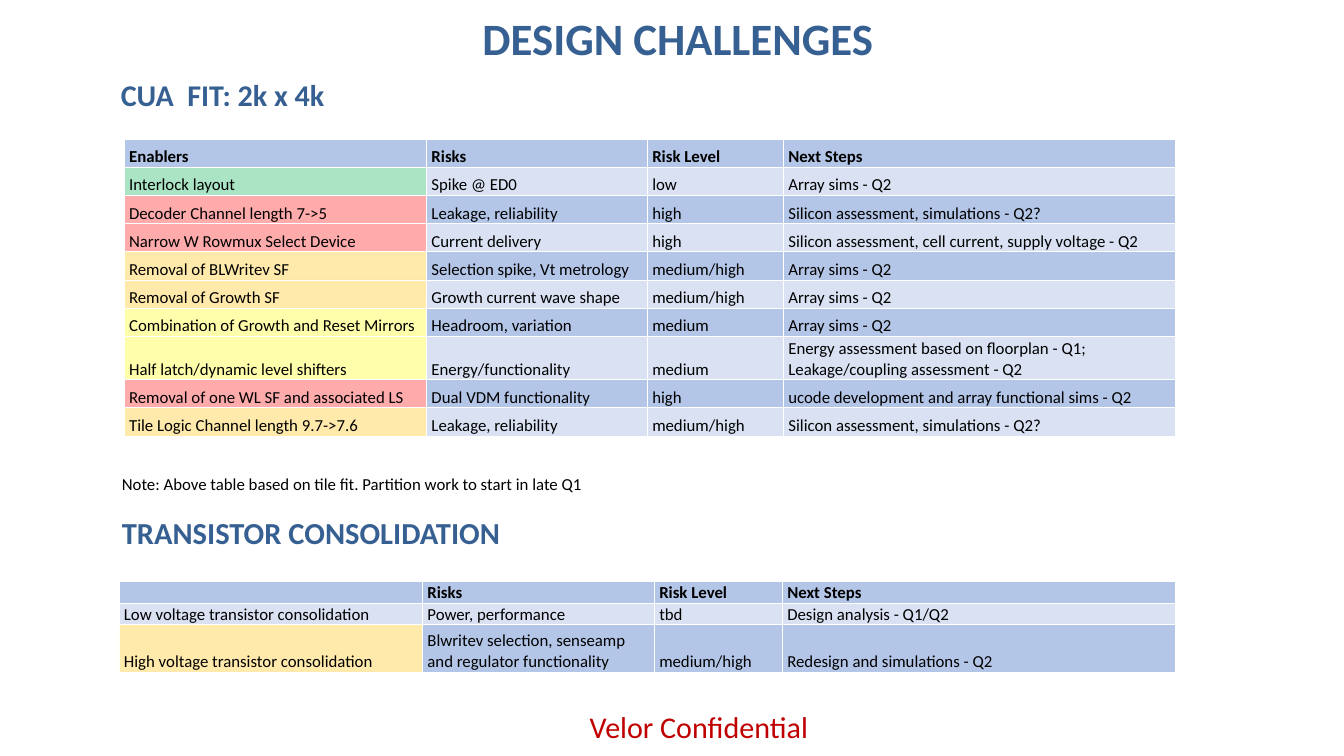
from dataclasses import dataclass

from lxml.etree import SubElement
from pptx import Presentation
from pptx.dml.color import RGBColor
from pptx.enum.text import MSO_ANCHOR as Anchor, PP_ALIGN as Align
from pptx.oxml import parse_xml
from pptx.oxml.ns import nsdecls, qn
from pptx.util import Inches, Pt

BLACK, WHITE, NAVY, CRIMSON = "000000", "FFFFFF", "376092", "C00000"
BANDS = ("B4C6E7", "D9E1F2")
GREEN, RED, AMBER, YELLOW = "00B050", "FF0000", "FFC000", "FFFF00"
STATUS_OPACITY = 33  # percent
FONT = "Calibri"

presentation = Presentation()
presentation.slide_width = Inches(13.33)
presentation.slide_height = Inches(7.5)


@dataclass
class Label:
    """A line of text; its box is in percent of the slide's width and height."""
    text: str
    left: float
    top: float
    width: float
    height: float
    size: float
    color: str
    bold: bool = False
    align: Align = Align.LEFT
    anchor: Anchor = Anchor.TOP


@dataclass
class RiskTable:
    """A banded table; lengths are in percent of the slide's width and height."""
    left: float
    top: float
    columns: tuple[float, ...]
    heights: tuple[float, ...]
    rows: list[tuple[str, ...]]
    statuses: tuple[str | None, ...]


LABELS = [
    Label("DESIGN CHALLENGES", 14.55, 0.53, 71.8, 8.93, 32, NAVY, True,
          Align.CENTER, Anchor.MIDDLE),
    Label("CUA  FIT: 2k x 4k", 8.25, 9.47, 70.35, 6.13, 21.5, NAVY, True),
    Label("Note: Above table based on tile fit. Partition work to start in late Q1",
          8.33, 62, 66.08, 4, 12, BLACK),
    Label("TRANSISTOR CONSOLIDATION", 8.33, 67.33, 31.06, 6.27, 21.8, NAVY, True),
    Label("Velor Confidential", 43.14, 93.07, 19.58, 6.27, 21.5, CRIMSON),
]

HEADINGS = ("Risks", "Risk Level", "Next Steps")

TABLES = [
    RiskTable(
        9.23, 18.4, (22.5, 16.43, 10.13, 29.18),
        (3.73,) * 7 + (5.73,) + (3.73,) * 2,
        [
            ("Enablers", *HEADINGS),
            ("Interlock layout", "Spike @ ED0", "low", "Array sims - Q2"),
            ("Decoder Channel length 7->5", "Leakage, reliability", "high",
             "Silicon assessment, simulations - Q2?"),
            ("Narrow W Rowmux Select Device", "Current delivery", "high",
             "Silicon assessment, cell current, supply voltage - Q2"),
            ("Removal of BLWritev SF", "Selection spike, Vt metrology",
             "medium/high", "Array sims - Q2"),
            ("Removal of Growth SF", "Growth current wave shape",
             "medium/high", "Array sims - Q2"),
            ("Combination of Growth and Reset Mirrors", "Headroom, variation",
             "medium", "Array sims - Q2"),
            ("Half latch/dynamic level shifters", "Energy/functionality", "medium",
             "Energy assessment based on floorplan - Q1;\n"
             "Leakage/coupling assessment - Q2"),
            ("Removal of one WL SF and associated LS", "Dual VDM functionality",
             "high", "ucode development and array functional sims - Q2"),
            ("Tile Logic Channel length 9.7->7.6", "Leakage, reliability",
             "medium/high", "Silicon assessment, simulations - Q2?"),
        ],
        (None, GREEN, RED, RED, AMBER, AMBER, YELLOW, YELLOW, RED, AMBER),
    ),
    RiskTable(
        8.85, 76.93, (22.58, 17.25, 9.53, 29.26), (2.84, 2.84, 6.27),
        [
            ("", *HEADINGS),
            ("Low voltage transistor consolidation", "Power, performance", "tbd",
             "Design analysis - Q1/Q2"),
            ("High voltage transistor consolidation",
             "Blwritev selection, senseamp\nand regulator functionality",
             "medium/high", "Redesign and simulations - Q2"),
        ],
        (None, None, AMBER),
    ),
]


def across(percent: float) -> int:
    return round(presentation.slide_width * percent / 100)


def down(percent: float) -> int:
    return round(presentation.slide_height * percent / 100)


def rgb(color: str) -> RGBColor:
    return RGBColor.from_string(color)


def set_all(target, values: dict) -> None:
    for name, value in values.items():
        setattr(target, name, value)


def write(frame, text: str, size: float, color: str, bold: bool,
          align: Align = Align.LEFT) -> None:
    frame.text = text
    for paragraph in frame.paragraphs:
        paragraph.alignment = align
        if not paragraph.runs:
            paragraph._p.get_or_add_endParaRPr().set("sz", str(round(size * 100)))
        for run in paragraph.runs:
            set_all(run.font, {"name": FONT, "size": Pt(size), "bold": bold})
            run.font.color.rgb = rgb(color)


def draw_label(slide, label: Label) -> None:
    box = slide.shapes.add_textbox(across(label.left), down(label.top),
                                   across(label.width), down(label.height))
    set_all(box.text_frame, {"word_wrap": True, "vertical_anchor": label.anchor})
    write(box.text_frame, label.text, label.size, label.color, label.bold, label.align)


def add_borders(cell) -> None:
    properties = cell._tc.get_or_add_tcPr()
    for position, side in enumerate("LRTB"):
        properties.insert(position, parse_xml(
            f'<a:ln{side} {nsdecls("a")} w="{Pt(0.5)}"><a:solidFill>'
            f'<a:srgbClr val="{WHITE}"/></a:solidFill></a:ln{side}>'))


def fill_cell(cell, color: str, opacity: int = 100) -> None:
    cell.fill.solid()
    cell.fill.fore_color.rgb = rgb(color)
    if opacity < 100:
        solid = cell._tc.tcPr.find(qn("a:solidFill"))
        SubElement(solid[0], qn("a:alpha")).set("val", str(opacity * 1000))


def draw_table(slide, risks: RiskTable) -> None:
    table = slide.shapes.add_table(
        len(risks.rows), len(risks.columns), across(risks.left), down(risks.top),
        across(sum(risks.columns)), down(sum(risks.heights))).table
    set_all(table, {"first_row": False, "horz_banding": False})
    for column, width in zip(table.columns, risks.columns):
        column.width = across(width)
    for index, (row, height) in enumerate(zip(table.rows, risks.heights)):
        row.height = down(height)
        for position, (cell, text) in enumerate(zip(row.cells, risks.rows[index])):
            set_all(cell, {"margin_left": Inches(0.05), "margin_right": Inches(0.01),
                           "margin_top": Inches(0.01), "margin_bottom": 0,
                           "vertical_anchor": Anchor.BOTTOM})
            write(cell.text_frame, text, 12, BLACK, index == 0)
            status = risks.statuses[index]
            if position == 0 and status:
                fill_cell(cell, status, STATUS_OPACITY)
            else:
                fill_cell(cell, BANDS[index % 2])
            add_borders(cell)


def main() -> None:
    slide = presentation.slides.add_slide(presentation.slide_layouts[6])
    for risks in TABLES:
        draw_table(slide, risks)
    for label in LABELS:
        draw_label(slide, label)
    presentation.save("out.pptx")


if __name__ == "__main__":
    main()
